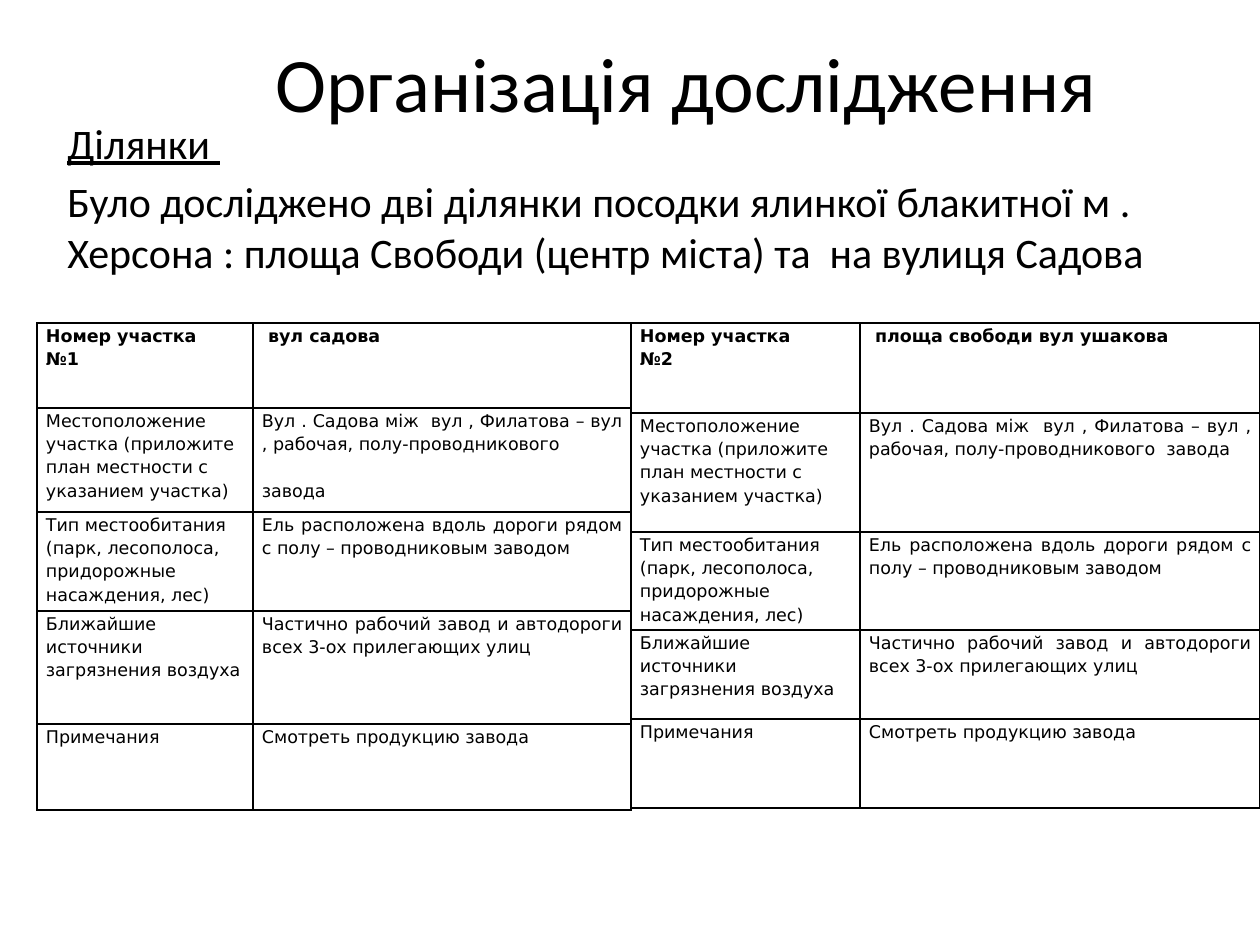
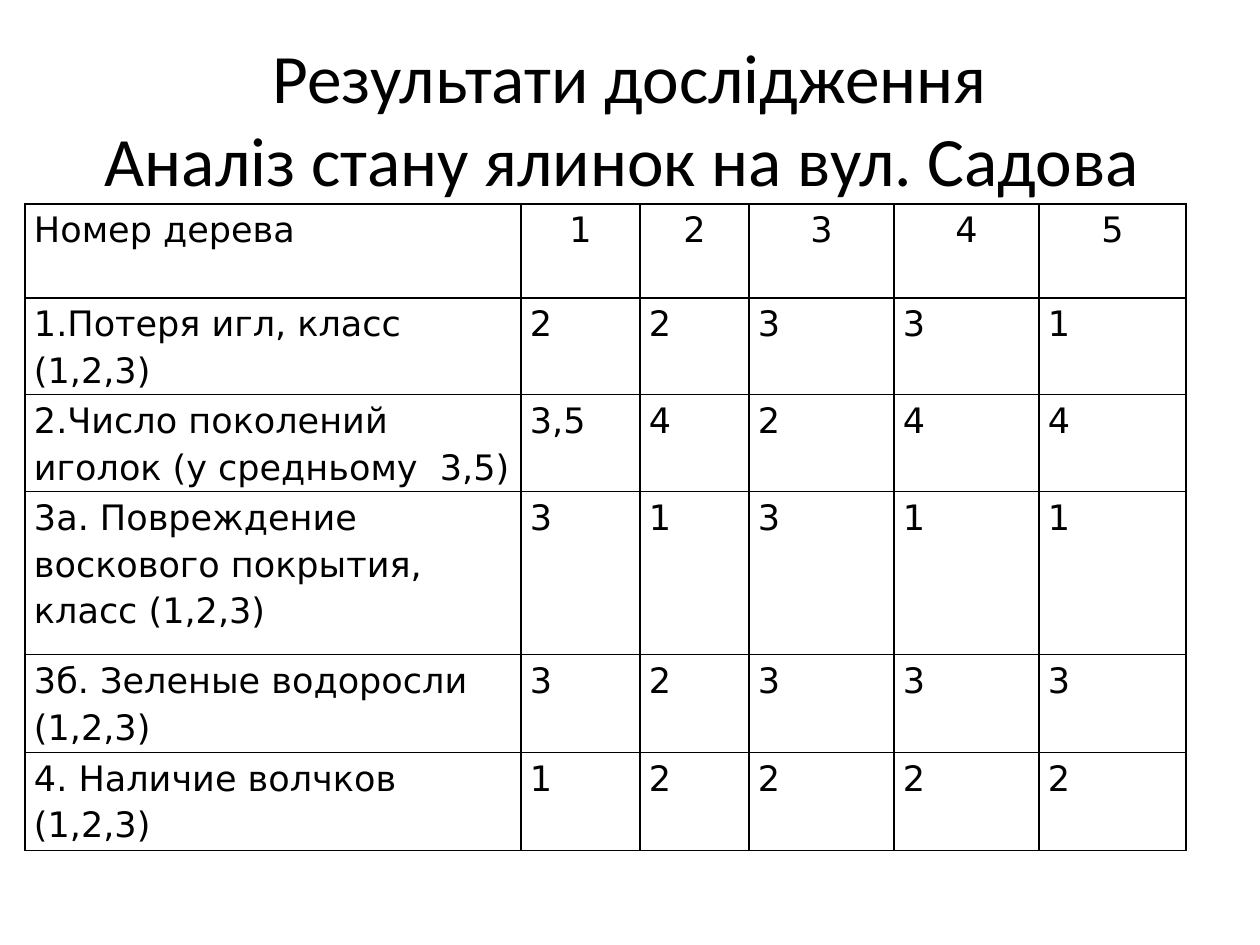
from lxml.etree import SubElement
from pptx import Presentation
from pptx.dml.color import RGBColor
from pptx.enum.text import MSO_ANCHOR, PP_ALIGN
from pptx.oxml.ns import qn
from pptx.util import Pt

PX = 914400 / 126
BLACK = RGBColor(0, 0, 0)
TITLE_FONT = "Calibri"
TABLE_FONT = "DejaVu Sans"
CELL_INSET = 9

SITES_TITLE = "Організація дослідження"
SITES_HEADING = "Ділянки "
SITES_INTRO = ("Було досліджено дві ділянки посодки ялинкої блакитної м . "
               "Херсона : площа Свободи (центр міста) та  на вулиця Садова")
SITE_LABELS = [
    "Местоположение участка (приложите план местности с указанием участка)",
    "Тип местообитания (парк, лесополоса, придорожные насаждения, лес)",
    "Ближайшие источники загрязнения воздуха",
    "Примечания",
]
SITE_FACTS = [
    ["Ель расположена вдоль дороги рядом с полу – проводниковым заводом"],
    ["Частично рабочий завод и автодороги всех 3-ох прилегающих улиц"],
    ["Смотреть продукцию завода"],
]
SITES = [
    {"number": "№1", "street": " вул садова ",
     "location": ["Вул . Садова між  вул , Филатова – вул , рабочая, полу-проводникового ",
                  "завода"],
     "left": 37, "cols": [216, 378], "rows": [85, 104, 99, 113, 86]},
    {"number": "№2", "street": " площа свободи вул ушакова",
     "location": ["Вул . Садова між  вул , Филатова – вул , рабочая, полу-проводникового  завода"],
     "left": 631, "cols": [229, 400], "rows": [90, 119, 98, 89, 89]},
]
SITES_TOP = 323

RESULTS_TITLE = "Результати дослідження\vАналіз стану ялинок на вул. Садова "
RESULTS = [
    ["Номер дерева", "1", "2", "3", "4", "5"],
    ["1.Потеря игл, класс (1,2,3)", "2", "2", "3", "3", "1"],
    ["2.Число поколений иголок (у средньому  3,5)", "3,5", "4", "2", "4", "4"],
    ["3а. Повреждение воскового покрытия, класс (1,2,3)", "3", "1", "3", "1", "1"],
    ["3б. Зеленые водоросли (1,2,3)", "3", "2", "3", "3", "3"],
    ["4. Наличие волчков (1,2,3)", "1", "2", "2", "2", "2"],
]
RESULTS_COLS = [496, 119, 109, 145, 145, 147]
RESULTS_ROWS = [94, 94, 97, 163, 98, 98]


def px(n):
    return round(n * PX)


def write(tf, text, size, font=TITLE_FONT, bold=False, underline=False,
          align=PP_ALIGN.LEFT, line=None, before=0, more=False):
    p = tf.add_paragraph() if more else tf.paragraphs[0]
    p.text = text
    p.alignment = align
    p.line_spacing = line
    p.space_before = Pt(before)
    for r in p.runs:
        r.font.name = font
        r.font.size = Pt(size)
        r.font.bold = bold
        r.font.underline = underline
        r.font.color.rgb = BLACK


def add_box(s, left, top, width, height, anchor=MSO_ANCHOR.TOP):
    tf = s.shapes.add_textbox(px(left), px(top), px(width), px(height)).text_frame
    tf.word_wrap = True
    tf.vertical_anchor = anchor
    return tf


def add_borders(cell):
    tc_pr = cell._tc.get_or_add_tcPr()
    for side in ("lnL", "lnR", "lnT", "lnB"):
        ln = SubElement(tc_pr, qn(f"a:{side}"), w=str(Pt(1)))
        SubElement(SubElement(ln, qn("a:solidFill")), qn("a:srgbClr"), val=str(BLACK))


def add_grid(s, left, top, cols, rows):
    table = s.shapes.add_table(len(rows), len(cols), px(left), px(top),
                               px(sum(cols)), px(sum(rows))).table
    table.first_row = table.horz_banding = False
    for column, width in zip(table.columns, cols):
        column.width = px(width)
    for row, height in zip(table.rows, rows):
        row.height = px(height)
    for cell in table.iter_cells():
        cell.margin_left = cell.margin_right = px(CELL_INSET)
        cell.margin_top = cell.margin_bottom = 0
        add_borders(cell)
        cell.fill.background()
    return table


def write_cell(cell, paragraphs, size, gap=0, **fmt):
    for i, text in enumerate(paragraphs):
        write(cell.text_frame, text, size, font=TABLE_FONT, line=1.15,
              before=gap if i else 0, more=i > 0, **fmt)


def add_site(s, site):
    table = add_grid(s, site["left"], SITES_TOP, site["cols"], site["rows"])
    labels = [["Номер участка", site["number"]]] + [[label] for label in SITE_LABELS]
    facts = [[site["street"]], site["location"]] + SITE_FACTS
    for i, (label, fact) in enumerate(zip(labels, facts)):
        write_cell(table.cell(i, 0), label, 10, bold=i == 0)
        write_cell(table.cell(i, 1), fact, 10, gap=13.5, bold=i == 0,
                   align=PP_ALIGN.JUSTIFY)


def build_sites(s):
    add_site(s, SITES[0])
    tf = add_box(s, 55, 111, 1150, 175)
    write(tf, SITES_HEADING, 24, underline=True)
    write(tf, SITES_INTRO, 24, before=4.8, more=True)
    write(add_box(s, 263, 29, 873, 106), SITES_TITLE, 44)
    add_site(s, SITES[1])


def build_results(s):
    tf = add_box(s, 63, 38, 1134, 158, anchor=MSO_ANCHOR.MIDDLE)
    write(tf, RESULTS_TITLE, 39.6, align=PP_ALIGN.CENTER)
    table = add_grid(s, 25, 204, RESULTS_COLS, RESULTS_ROWS)
    for i, values in enumerate(RESULTS):
        for j, value in enumerate(values):
            number_align = PP_ALIGN.JUSTIFY if i else PP_ALIGN.CENTER
            write_cell(table.cell(i, j), [value], 20,
                       align=number_align if j else PP_ALIGN.LEFT)


def main():
    prs = Presentation()
    prs.slide_width, prs.slide_height = px(1260), px(945)
    for build in (build_sites, build_results):
        build(prs.slides.add_slide(prs.slide_layouts[6]))
    prs.save("out.pptx")


if __name__ == "__main__":
    main()
